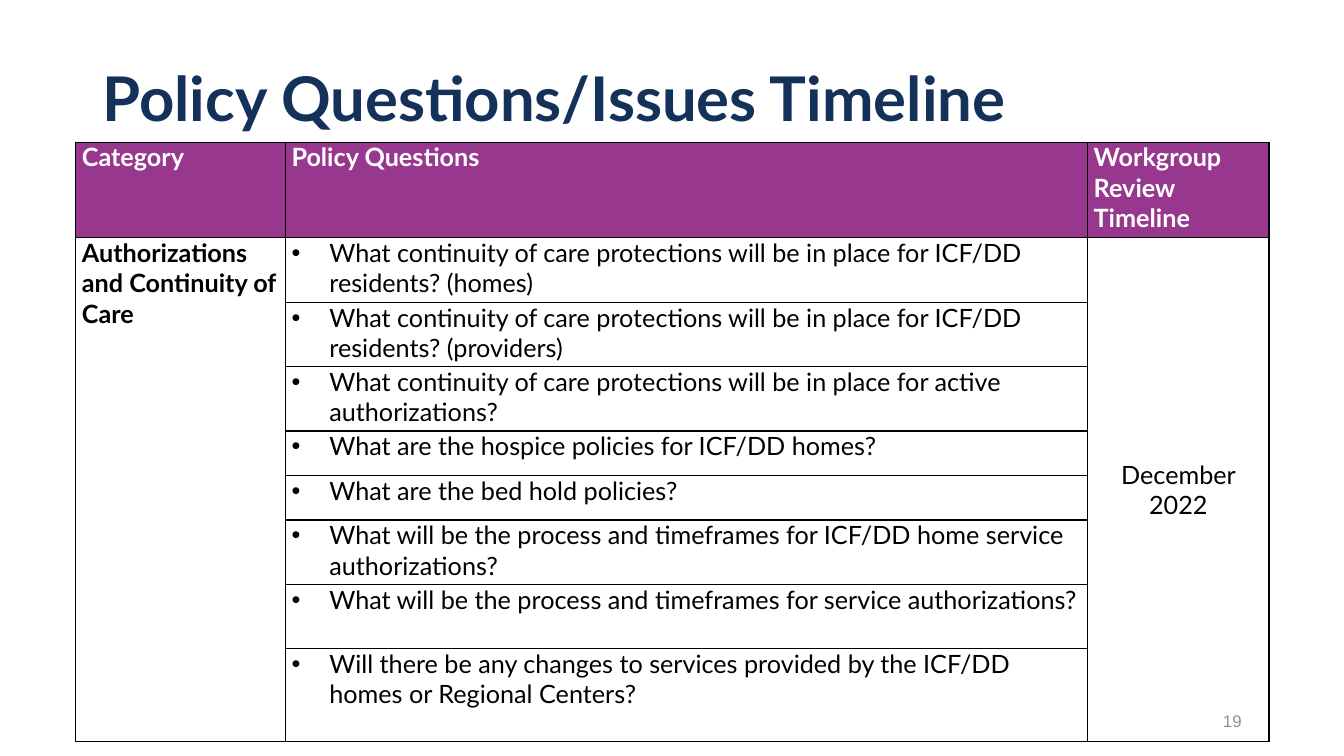
from lxml.etree import SubElement
from pptx import Presentation
from pptx.dml.color import RGBColor
from pptx.enum.text import MSO_ANCHOR, MSO_AUTO_SIZE, PP_ALIGN
from pptx.oxml.ns import qn
from pptx.util import Pt

NAVY = RGBColor(0x14, 0x31, 0x5A)
PURPLE = RGBColor(0x97, 0x38, 0x8E)
GRAY = RGBColor(0x8F, 0x8F, 0x8F)
WHITE = RGBColor(0xFF, 0xFF, 0xFF)
BLACK = RGBColor(0, 0, 0)

HEADS = ["Category", "Policy Questions", "Workgroup Review Timeline"]
TOPIC = "Authorizations and Continuity of Care"
DATE = "December 2022"
ITEMS = [
    ("What continuity of care protections will be in place for ICF/DD residents? (homes)", 46),
    ("What continuity of care protections will be in place for ICF/DD residents? (providers)", 46),
    ("What continuity of care protections will be in place for active authorizations?", 46),
    ("What are the hospice policies for ICF/DD homes?", 31.8),
    ("What are the bed hold policies?", 31.8),
    ("What will be the process and timeframes for ICF/DD home service authorizations?", 46),
    ("What will be the process and timeframes for service authorizations?", 46),
    ("Will there be any changes to services provided by the ICF/DD homes or Regional Centers?", 66.4),
]
WIDTHS = [149.8, 573, 129.7]
HEAD_H = 68.4


def style(para, size, color, bold=False, name="Lato", align=PP_ALIGN.LEFT):
    """Set the font and alignment of a paragraph."""
    font = para.font
    font.name, font.size, font.bold = name, Pt(size), bold
    font.color.rgb = color
    para.alignment = align


def place(shape, box):
    """Move a shape to a box given in points."""
    shape.left, shape.top, shape.width, shape.height = map(Pt, box)


def add_title(slide, box):
    """Fill the title placeholder."""
    title = slide.shapes.title
    place(title, box)
    frame = title.text_frame
    frame.text = "Policy Questions/Issues Timeline"
    frame.auto_size = MSO_AUTO_SIZE.NONE
    frame.vertical_anchor = MSO_ANCHOR.MIDDLE
    para = frame.paragraphs[0]
    para.line_spacing = 0.9
    style(para, 44, NAVY, True)


def add_page(slide, box):
    """Add the page number."""
    frame = slide.shapes.add_textbox(*map(Pt, box)).text_frame
    frame.word_wrap = True
    frame.vertical_anchor = MSO_ANCHOR.MIDDLE
    frame.text = "19"
    style(frame.paragraphs[0], 12, GRAY, name="Arial", align=PP_ALIGN.RIGHT)


def add_edges(cell):
    """Draw thin black lines on all sides of a cell."""
    props = cell._tc.get_or_add_tcPr()
    for side in ("lnL", "lnR", "lnT", "lnB"):
        line = SubElement(props, qn(f"a:{side}"), w=str(Pt(1)))
        fill = SubElement(line, qn("a:solidFill"))
        SubElement(fill, qn("a:srgbClr"), val=str(BLACK))


def add_bullet(para):
    """Give a paragraph a hanging bullet."""
    props = para._p.get_or_add_pPr()
    props.set("marL", str(Pt(27)))
    props.set("indent", str(-Pt(27)))
    SubElement(props, qn("a:buFont"), typeface="Arial")
    SubElement(props, qn("a:buChar"), char="•")


def write(cell, text, color=BLACK, bold=False, align=PP_ALIGN.LEFT):
    """Put styled text in a cell and return its paragraph."""
    cell.text = text
    para = cell.text_frame.paragraphs[0]
    style(para, 18, color, bold, align=align)
    return para


def add_grid(slide, box):
    """Build the table of policy questions."""
    count = len(ITEMS) + 1
    table = slide.shapes.add_table(count, len(WIDTHS), *map(Pt, box)).table
    for col, width in zip(table.columns, WIDTHS):
        col.width = Pt(width)
    heights = [HEAD_H] + [height for _, height in ITEMS]
    for row, height in zip(table.rows, heights):
        row.height = Pt(height)
    for cell in table.iter_cells():
        cell.margin_left = cell.margin_right = Pt(4.5)
        cell.margin_top = cell.margin_bottom = 0
        add_edges(cell)
        cell.fill.background()
    for col, head in enumerate(HEADS):
        cell = table.cell(0, col)
        cell.fill.solid()
        cell.fill.fore_color.rgb = PURPLE
        write(cell, head, WHITE, True)
    for row, (text, _) in enumerate(ITEMS, 1):
        add_bullet(write(table.cell(row, 1), text))
    for col in (0, 2):
        table.cell(1, col).merge(table.cell(count - 1, col))
    write(table.cell(1, 0), TOPIC, bold=True)
    date = table.cell(1, 2)
    write(date, DATE, align=PP_ALIGN.CENTER)
    date.vertical_anchor = MSO_ANCHOR.MIDDLE


def main():
    """Build and save the slide."""
    deck = Presentation()
    deck.slide_width, deck.slide_height = Pt(960), Pt(540)
    slide = deck.slides.add_slide(deck.slide_layouts[5])
    add_title(slide, (66, 43, 828, 58.5))
    add_page(slide, (678, 500.5, 216, 28.8))
    add_grid(slide, (54, 101.5, sum(WIDTHS), 428))
    deck.save("out.pptx")


if __name__ == "__main__":
    main()
